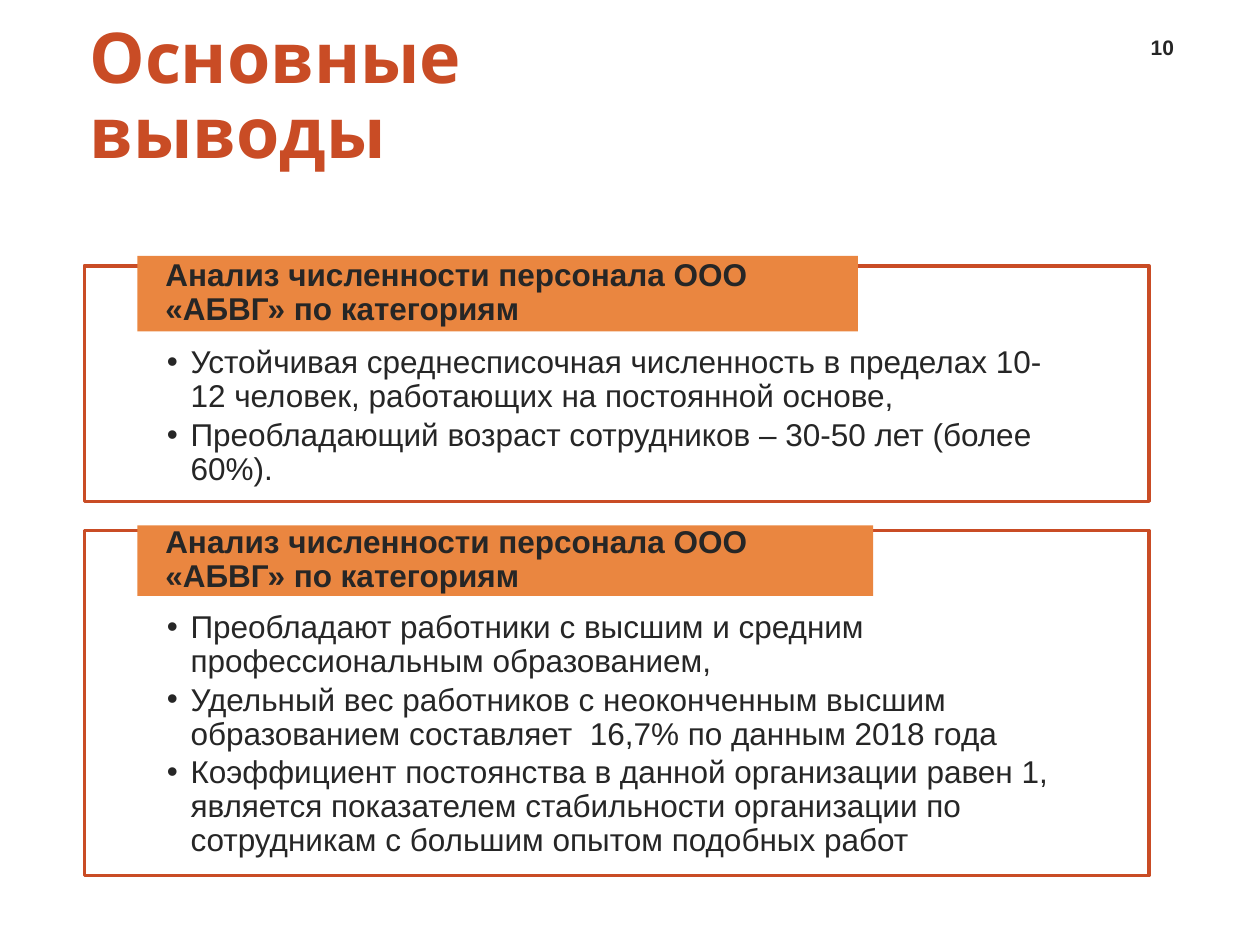
"""Build the slide with the main conclusions of the staff analysis."""
from lxml import etree
from pptx import Presentation
from pptx.dml.color import RGBColor
from pptx.enum.shapes import MSO_SHAPE
from pptx.enum.text import MSO_ANCHOR, MSO_AUTO_SIZE, PP_ALIGN
from pptx.oxml.ns import qn
from pptx.util import Pt

RUST = RGBColor(0xC9, 0x4C, 0x25)
ORANGE = RGBColor(0xEA, 0x86, 0x40)
DARK = RGBColor(0x26, 0x26, 0x26)
RECTANGLE = MSO_SHAPE.RECTANGLE
TOP, MIDDLE, BOTTOM = MSO_ANCHOR.TOP, MSO_ANCHOR.MIDDLE, MSO_ANCHOR.BOTTOM
LEFT, CENTER = PP_ALIGN.LEFT, PP_ALIGN.CENTER
NO_FIT = MSO_AUTO_SIZE.NONE

PANEL_LEFT, PANEL_WIDTH = 48.2, 608.4
HEADING_LEFT = 78.5
BULLET_INDENT = 13.5

HEADING = "Анализ численности персонала ООО «АБВГ» по категориям"
PANELS = [
    {
        "panel": (151.9, 134.6),
        "heading": (146.2, 411.8, 43.2),
        "points": [
            "Устойчивая среднесписочная численность в пределах 10-12 человек, "
            "работающих на постоянной основе,",
            "Преобладающий возраст сотрудников – 30-50 лет (более 60%).",
        ],
    },
    {
        "panel": (303.1, 197.3),
        "heading": (300.2, 420.5, 40.3),
        "points": [
            "Преобладают работники с высшим и средним профессиональным образованием,",
            "Удельный вес работников с неоконченным высшим образованием "
            "составляет  16,7% по данным 2018 года",
            "Коэффициент постоянства в данной организации равен 1, является "
            "показателем стабильности организации по сотрудникам с большим "
            "опытом подобных работ",
        ],
    },
]


def set_indent(para, left, first=0):
    """Set the left margin and first-line indent of a paragraph in points."""
    properties = para._p.get_or_add_pPr()
    properties.set("marL", str(Pt(left)))
    properties.set("indent", str(Pt(first)))
    return properties


def add_bullet(para):
    """Give a paragraph a round bullet with a hanging indent."""
    properties = set_indent(para, BULLET_INDENT, -BULLET_INDENT)
    etree.SubElement(properties, qn("a:buFont")).set("typeface", "Arial")
    etree.SubElement(properties, qn("a:buChar")).set("char", "•")


def write_text(box, lines, size=18, font="Arial", color=DARK, bold=False, align=LEFT,
               anchor=TOP, insets=(7.2, 3.6, 7.2, 3.6), spacing=0.9, after=0,
               bulleted=False):
    """Fill a box with one formatted paragraph per line."""
    frame = box.text_frame
    frame.word_wrap = True
    frame.auto_size = NO_FIT
    frame.vertical_anchor = anchor
    (frame.margin_left, frame.margin_top,
     frame.margin_right, frame.margin_bottom) = map(Pt, insets)
    for index, line in enumerate(lines):
        para = frame.paragraphs[0] if index == 0 else frame.add_paragraph()
        if bulleted:
            para.level = 1
            add_bullet(para)
        para.alignment = align
        para.line_spacing = spacing
        para.space_before = Pt(0)
        para.space_after = Pt(after)
        span = para.add_run()
        span.text = line
        span.font.size = Pt(size)
        span.font.name = font
        span.font.bold = bold
        span.font.color.rgb = color


def add_rectangle(page, left, top, width, height, fill=None, line=None):
    """Add a flat rectangle with an optional fill and outline."""
    box = page.shapes.add_shape(RECTANGLE, Pt(left), Pt(top), Pt(width), Pt(height))
    box.shadow.inherit = False
    if fill is None:
        box.fill.background()
    else:
        box.fill.solid()
        box.fill.fore_color.rgb = fill
    if line is None:
        box.line.fill.background()
    else:
        box.line.color.rgb = line
        box.line.width = Pt(2)
    return box


def add_panel(page, panel, heading, points):
    """Add an outlined list with its heading bar across the top edge."""
    top, height = panel
    box = add_rectangle(page, PANEL_LEFT, top, PANEL_WIDTH, height, line=RUST)
    write_text(box, points, insets=(47.2, 46.1, 47.2, 10), after=2.7, bulleted=True)
    bar = add_rectangle(page, HEADING_LEFT, *heading, fill=ORANGE)
    write_text(bar, [HEADING], bold=True, anchor=MIDDLE, insets=(16, 0, 16, 0))


def set_title(page, text):
    """Place and format the title."""
    title = page.shapes.title
    title.left, title.top, title.width, title.height = map(Pt, (36.7, -0.7, 365, 113.8))
    write_text(title, [text], size=40, font="Karla", color=RUST, bold=True,
               anchor=MIDDLE, insets=(0, 3.6, 0, 3.6))
    set_indent(title.text_frame.paragraphs[0], 14.4)


def add_page_number(page, number):
    """Add the page number in the top right corner."""
    box = page.shapes.add_textbox(Pt(644.4), Pt(13.7), Pt(39.6), Pt(23.8))
    write_text(box, [number], size=12, bold=True, align=CENTER, anchor=BOTTOM, spacing=1.0)


def main():
    """Build and save the deck."""
    deck = Presentation()
    deck.slide_width, deck.slide_height = Pt(720), Pt(540)
    page = deck.slides.add_slide(deck.slide_layouts[5])
    set_title(page, "Основные выводы")
    for content in PANELS:
        add_panel(page, **content)
    add_page_number(page, "10")
    deck.save("out.pptx")


if __name__ == "__main__":
    main()
